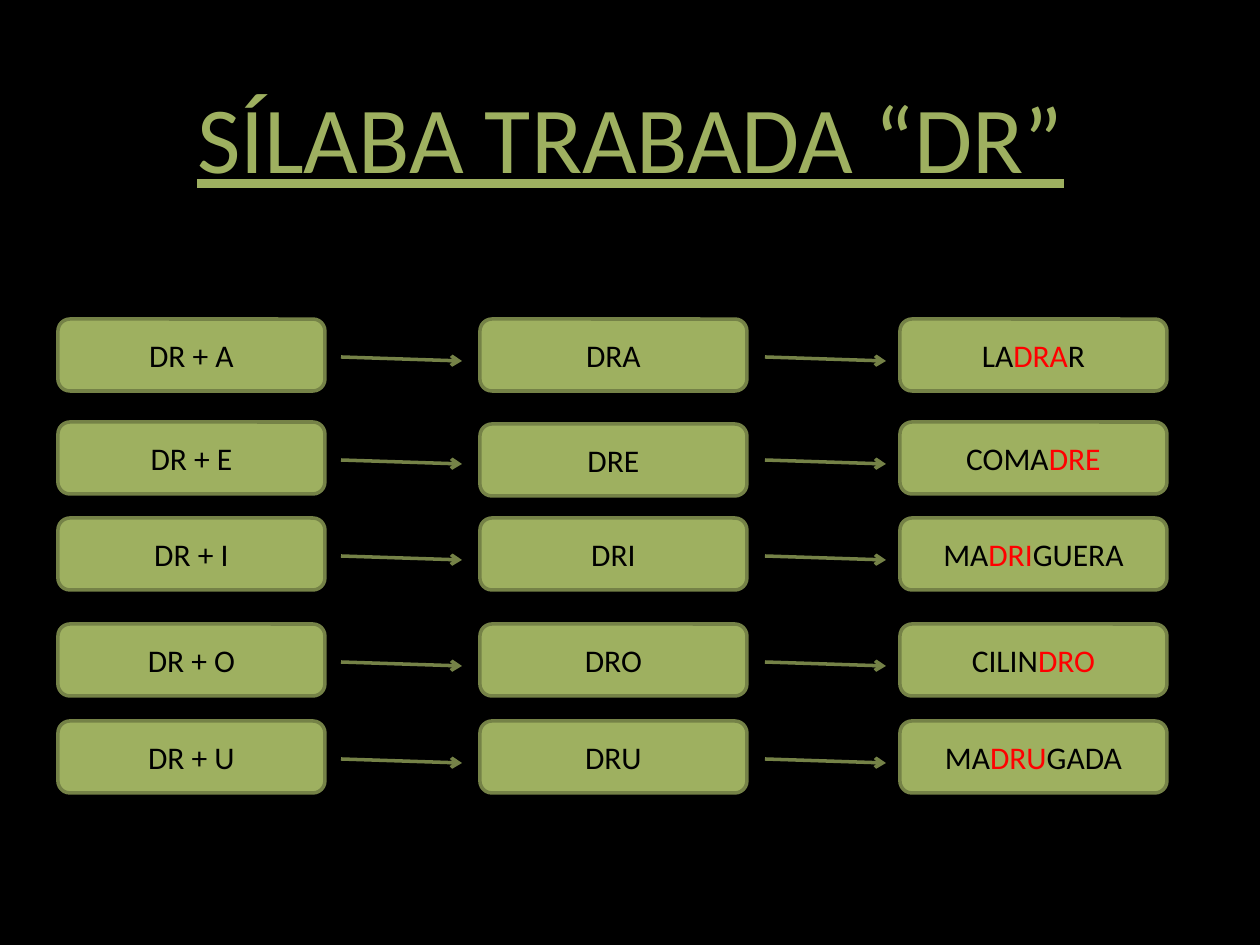
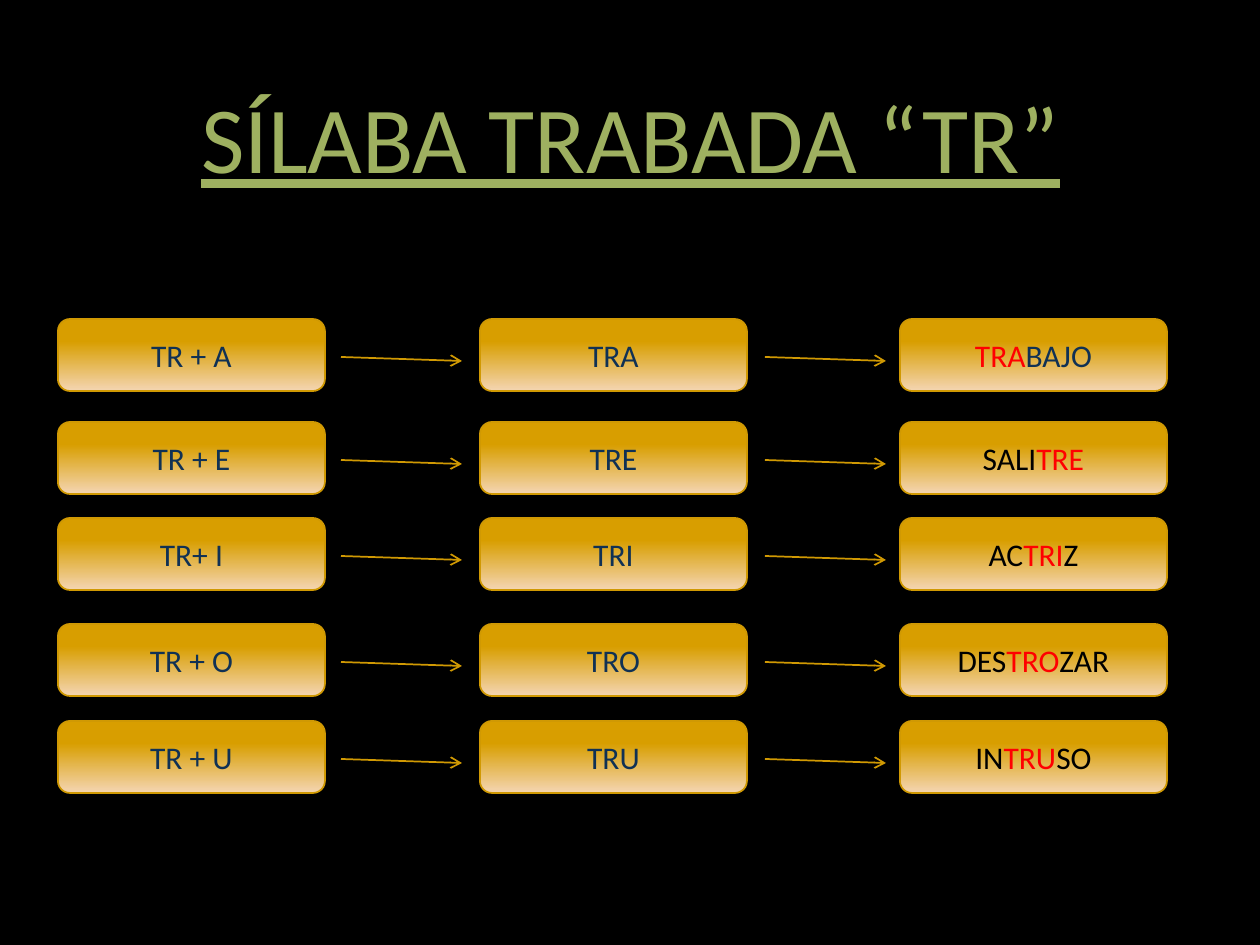
"""Build two slides that join consonant blends to vowels and show example words."""
from dataclasses import dataclass

from lxml import etree
from pptx import Presentation, util as u
from pptx.dml.color import RGBColor
from pptx.enum import shapes, text
from pptx.oxml.ns import qn


@dataclass(frozen=True)
class Theme:
    font: str = "Calibri"
    title_size: int = 54
    label_size: int = 18
    background: str = "000000"
    title: str = "9EB060"
    word: str = "000000"
    syllable: str = "FF0000"


@dataclass(frozen=True)
class Palette:
    fill: tuple
    line: str
    line_width: int
    ink: str


THEME = Theme()
GREEN = Palette(("9EB060",), "758247", 2, "000000")
GOLD = Palette(("D89E00", "F4D5B2"), "D09903", 1, "103154")

ROW_TOPS = (319, 422, 518, 624, 721)
COLUMN_LEFTS = (58, 480, 900)
ARROW_LEFTS = (341, 765)
BOX_WIDTH, BOX_HEIGHT = 267, 72
ARROW_WIDTH, ARROW_START, ARROW_END = 121, 38, 42

LESSONS = (
    ("DR", GREEN, (319, 424, 518, 624, 721), (
        ("DR + A", "DRA", "LADRAR"),
        ("DR + E", "DRE", "COMADRE"),
        ("DR + I", "DRI", "MADRIGUERA"),
        ("DR + O", "DRO", "CILINDRO"),
        ("DR + U", "DRU", "MADRUGADA"),
    )),
    ("TR", GOLD, ROW_TOPS, (
        ("TR + A", "TRA", "TRABAJO"),
        ("TR + E", "TRE", "SALITRE"),
        ("TR+ I", "TRI", "ACTRIZ"),
        ("TR + O", "TRO", "DESTROZAR"),
        ("TR + U", "TRU", "INTRUSO"),
    )),
)


def px(length):
    return u.Emu(round(length * 914400 / 126))


def add_run(paragraph, wording, size, color):
    paragraph.alignment = text.PP_ALIGN.CENTER
    run = paragraph.add_run()
    run.text = wording
    run.font.name = THEME.font
    run.font.size = u.Pt(size)
    run.font.color.rgb = RGBColor.from_string(color)
    return run


deck = Presentation()
deck.slide_width, deck.slide_height = px(1260), px(945)
backdrop = deck.slide_master.background.fill
backdrop.solid()
backdrop.fore_color.rgb = RGBColor.from_string(THEME.background)
title_only = deck.slide_layouts[5]

for blend, palette, syllable_tops, rows in LESSONS:
    slide = deck.slides.add_slide(title_only)
    heading = slide.shapes.title
    heading.left, heading.top, heading.width, heading.height = map(px, (76, 15, 1109, 184))
    heading.text_frame.vertical_anchor = text.MSO_ANCHOR.BOTTOM
    heading_run = add_run(heading.text_frame.paragraphs[0], f"SÍLABA TRABADA “{blend}”",
                          THEME.title_size, THEME.title)
    heading_run.font.underline = True

    for row_top, syllable_top, (addition, syllable, word) in zip(ROW_TOPS, syllable_tops, rows):
        before, _, after = word.partition(syllable)
        word_ink = THEME.word if before else palette.ink
        labels = (
            ((addition, palette.ink),),
            ((syllable, palette.ink),),
            ((before, word_ink), (syllable, THEME.syllable), (after, word_ink)),
        )
        for left, top, label in zip(COLUMN_LEFTS, (row_top, syllable_top, row_top), labels):
            box = slide.shapes.add_shape(shapes.MSO_SHAPE.ROUNDED_RECTANGLE,
                                         px(left), px(top), px(BOX_WIDTH), px(BOX_HEIGHT))
            box.shadow.inherit = False
            if len(palette.fill) == 1:
                box.fill.solid()
                box.fill.fore_color.rgb = RGBColor.from_string(palette.fill[0])
            else:
                box.fill.gradient()
                box.fill.gradient_angle = 270
                for stop, position, color in zip(box.fill.gradient_stops, (0.31, 1), palette.fill):
                    stop.position = position
                    stop.color.rgb = RGBColor.from_string(color)
            box.line.color.rgb = RGBColor.from_string(palette.line)
            box.line.width = u.Pt(palette.line_width)
            box.text_frame.vertical_anchor = text.MSO_ANCHOR.MIDDLE
            for wording, color in label:
                if wording:
                    add_run(box.text_frame.paragraphs[0], wording, THEME.label_size, color)

        for left in ARROW_LEFTS:
            arrow = slide.shapes.add_connector(shapes.MSO_CONNECTOR.STRAIGHT,
                                               px(left), px(row_top + ARROW_START),
                                               px(left + ARROW_WIDTH), px(row_top + ARROW_END))
            arrow.line.color.rgb = RGBColor.from_string(palette.line)
            arrow.line.width = u.Pt(palette.line_width)
            etree.SubElement(arrow.line._get_or_add_ln(), qn("a:tailEnd"), type="arrow")
            etree.SubElement(arrow._element.spPr, qn("a:effectLst"))

deck.save("out.pptx")
